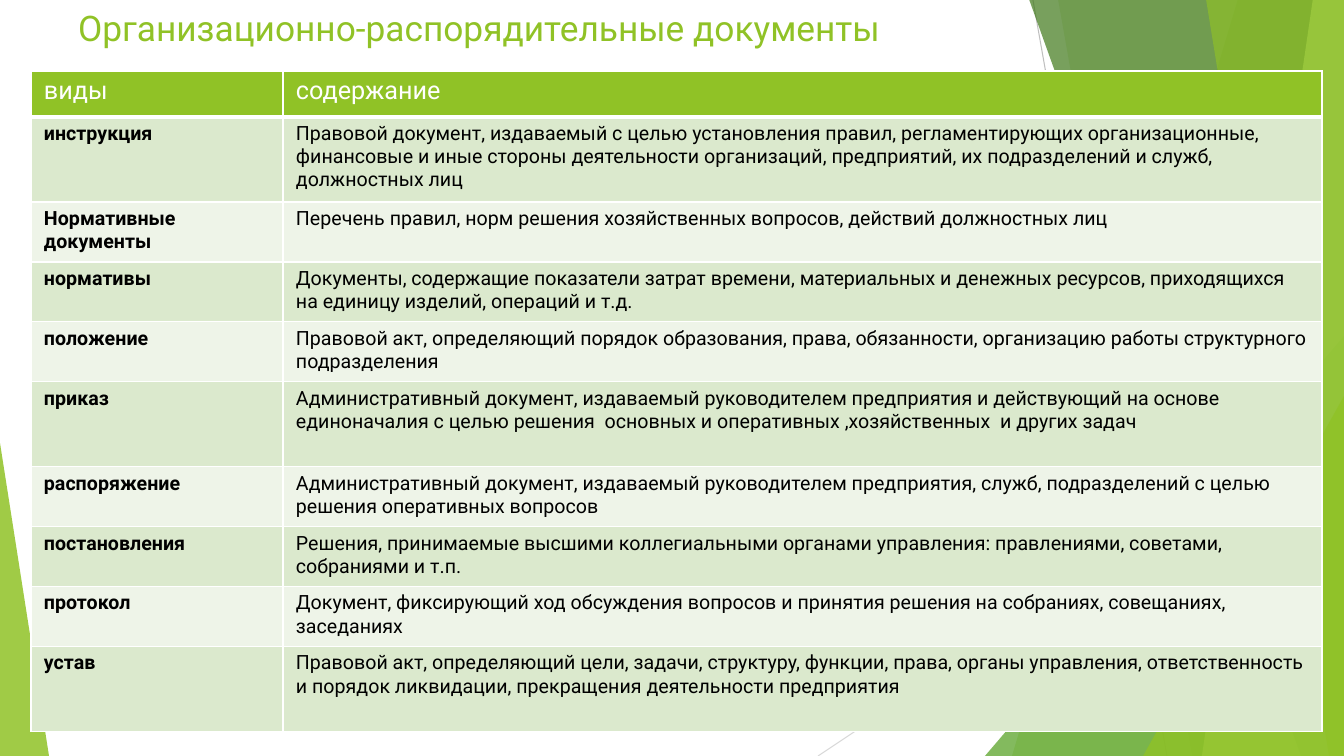
from pptx import Presentation
from pptx.dml.color import RGBColor
from pptx.enum.shapes import MSO_CONNECTOR as Connector, MSO_SHAPE as Preset
from pptx.enum.text import MSO_ANCHOR as Anchor, MSO_AUTO_SIZE as AutoSize, PP_ALIGN as Align
from pptx.oxml.ns import qn
from pptx.util import Pt
from lxml.etree import SubElement

EMU_PER_PX = 914400 / 100.8
FONT = "Roboto"
COLORS = {
    "white": "FFFFFF", "black": "000000", "green": "90C226",
    "leaf": "54A021", "forest": "3F7819", "lime": "C0E474",
    "gray": "BFBFBF", "light_gray": "D9D9D9",
    "odd_row": "DBE9CD", "even_row": "EEF4E8",
}
TITLE = "Организационно-распорядительные документы"
HEADINGS = ("виды", "содержание")
DOCUMENTS = [
    ("инструкция", "Правовой документ, издаваемый с целью установления правил, регламентирующих организационные, финансовые и иные стороны деятельности организаций, предприятий, их подразделений и служб, должностных лиц", 85),
    ("Нормативные документы", "Перечень правил, норм решения хозяйственных вопросов, действий должностных лиц", 60),
    ("нормативы", "Документы, содержащие показатели затрат времени, материальных и денежных ресурсов, приходящихся на единицу изделий, операций и т.д.", 60),
    ("положение", "Правовой акт, определяющий порядок образования, права, обязанности, организацию работы структурного подразделения", 60),
    ("приказ", "Административный документ, издаваемый руководителем предприятия и действующий на основе единоначалия с целью решения  основных и оперативных ,хозяйственных  и других задач", 85),
    ("распоряжение", "Административный документ, издаваемый руководителем предприятия, служб, подразделений с целью решения оперативных вопросов", 60),
    ("постановления", "Решения, принимаемые высшими коллегиальными органами управления: правлениями, советами, собраниями и т.п.", 60),
    ("протокол", "Документ, фиксирующий ход обсуждения вопросов и принятия решения на собраниях, совещаниях, заседаниях", 60),
    ("устав", "Правовой акт, определяющий цели, задачи, структуру, функции, права, органы управления, ответственность и порядок ликвидации, прекращения деятельности предприятия", 85),
]


def px(*lengths):
    values = [round(length * EMU_PER_PX) for length in lengths]
    return values[0] if len(values) == 1 else values


def rgb(name):
    return RGBColor.from_string(COLORS[name])


def write_text(frame, text, size, color, bold=False):
    paragraph = frame.paragraphs[0]
    paragraph.alignment = Align.LEFT
    run = paragraph.add_run()
    run.text = text
    run.font.name = FONT
    run.font.size = Pt(size)
    run.font.bold = bold
    run.font.color.rgb = rgb(color)


def paint(shape, color, opacity):
    shape.shadow.inherit = False
    shape.fill.solid()
    shape.fill.fore_color.rgb = rgb(color)
    shape.line.fill.background()
    color_element = shape.element.spPr.find(".//" + qn("a:srgbClr"))
    SubElement(color_element, qn("a:alpha"), val=str(opacity * 1000))


def add_line(slide, start, end, color):
    line = slide.shapes.add_connector(Connector.STRAIGHT, *px(*start, *end))
    line.line.color.rgb = rgb(color)
    line.line.width = Pt(0.75)
    SubElement(line.element.spPr, qn("a:effectLst"))


def add_band(slide, box, top_x, bottom_x, color, opacity):
    left, top, width, height = box
    right, bottom = left + width, top + height
    builder = slide.shapes.build_freeform(left + top_x, top - 1, EMU_PER_PX)
    builder.add_line_segments([(right, top - 1), (right, bottom), (left + bottom_x, bottom)], close=True)
    paint(builder.convert_to_shape(), color, opacity)


def add_corner(slide, box, width, height, apex, color, opacity):
    left = box[0] + (box[2] - width) * apex
    top = box[1] + box[3] - height
    triangle = slide.shapes.add_shape(Preset.ISOSCELES_TRIANGLE, *px(left, top, width, height))
    triangle.adjustments[0] = apex
    paint(triangle, color, opacity)


def add_backdrop(slide, box):
    left, top, width, height = box
    right, bottom = left + width, top + height
    add_line(slide, (left + 1033, top), (left + 1167, bottom), "gray")
    add_line(slide, (right, top + 406), (left + 818, bottom), "light_gray")
    add_band(slide, box, 1238, 1012, "green", 30)
    add_band(slide, box, 1058, 1192, "green", 20)
    add_corner(slide, box, 359, 420, 1, "leaf", 72)
    add_band(slide, box, 1029, 1301, "forest", 70)
    add_band(slide, box, 1313, 1202, "lime", 70)
    add_band(slide, box, 1206, 1329, "green", 65)
    add_corner(slide, box, 201, 360, 1, "green", 80)
    add_corner(slide, box, 49, 313, 0, "green", 85)


def place_title(slide, box):
    title = slide.shapes.title
    title.left, title.top, title.width, title.height = px(*box)
    frame = title.text_frame
    frame.auto_size = AutoSize.NONE
    frame.vertical_anchor = Anchor.MIDDLE
    write_text(frame, TITLE, 25.2, "green")
    slide.shapes.element.append(title.element)


def add_border(cell, side, width):
    properties = cell._tc.get_or_add_tcPr()
    border = SubElement(properties, qn(f"a:ln{side}"), w=str(Pt(width)))
    fill = SubElement(border, qn("a:solidFill"))
    SubElement(fill, qn("a:srgbClr"), val=COLORS["white"])


def fill_cell(cell, text, fill, bottom_border=1, **text_format):
    for side in "LRT":
        add_border(cell, side, 1)
    add_border(cell, "B", bottom_border)
    cell.fill.solid()
    cell.fill.fore_color.rgb = rgb(fill)
    cell.margin_left = cell.margin_right = px(13)
    cell.margin_top = cell.margin_bottom = px(5)
    cell.vertical_anchor = Anchor.TOP
    write_text(cell.text_frame, text, **text_format)


def add_document_table(slide, box):
    width = box[2]
    table = slide.shapes.add_table(len(DOCUMENTS) + 1, 2, *px(*box)).table
    table.columns[0].width, table.columns[1].width = px(252, width - 252)
    table.rows[0].height = px(46)
    for column, heading in enumerate(HEADINGS):
        fill_cell(table.cell(0, column), heading, "green", bottom_border=3, size=18, color="white")
    for row, (kind, content, height) in enumerate(DOCUMENTS, start=1):
        table.rows[row].height = px(height)
        fill = "odd_row" if row % 2 else "even_row"
        fill_cell(table.cell(row, 0), kind, fill, size=14, color="black", bold=True)
        fill_cell(table.cell(row, 1), content, fill, size=14, color="black")


def main():
    presentation = Presentation()
    presentation.slide_width, presentation.slide_height = px(1344, 756)
    slide = presentation.slides.add_slide(presentation.slide_layouts[5])
    add_backdrop(slide, (0, 0, 1344, 756))
    place_title(slide, (68, 0, 1210, 55))
    add_document_table(slide, (31, 71, 1291, 661))
    presentation.save("out.pptx")


if __name__ == "__main__":
    main()
